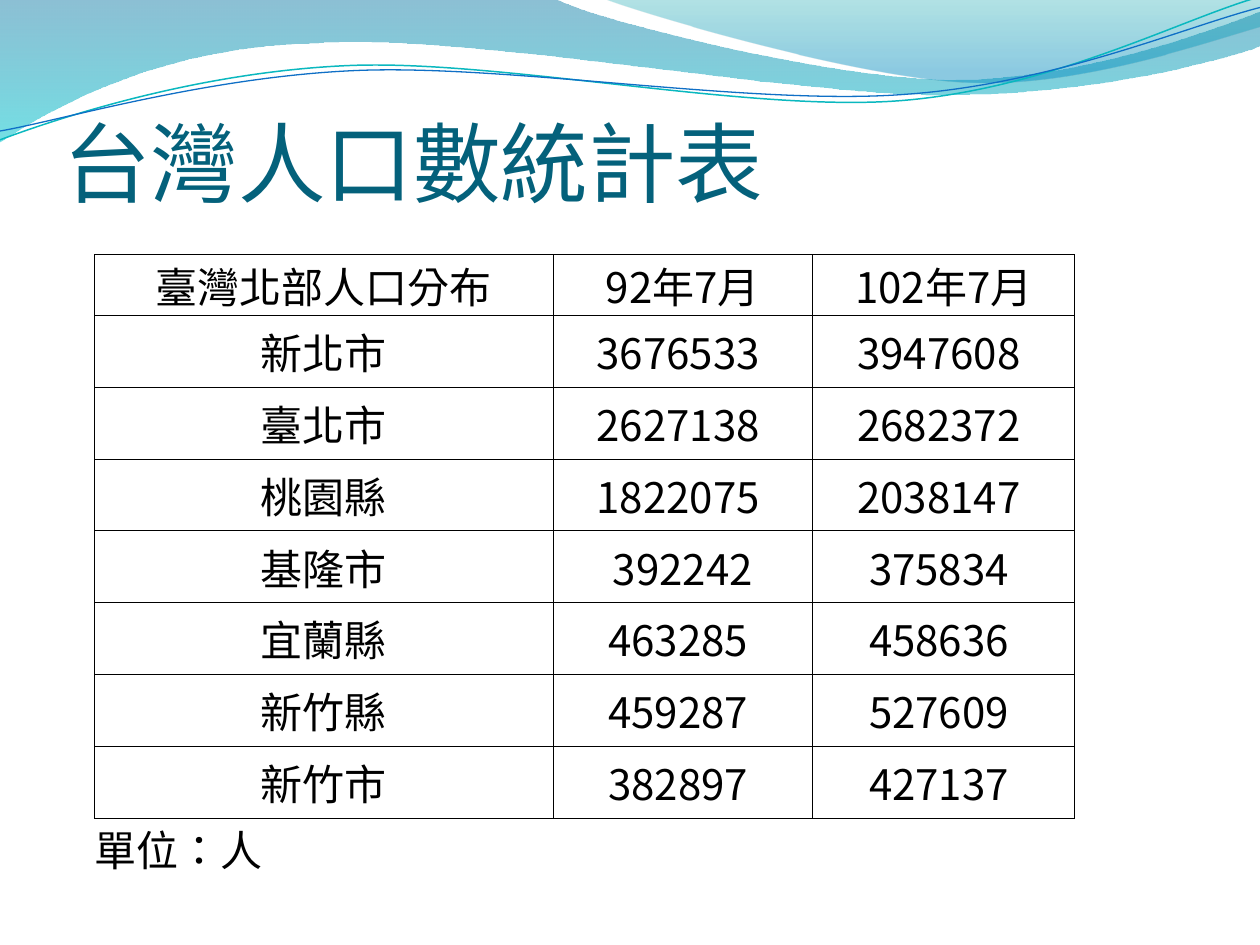
from math import cos, radians, sin

from lxml import etree
from pptx import Presentation
from pptx.dml.color import RGBColor
from pptx.enum.text import MSO_ANCHOR, PP_ALIGN
from pptx.oxml.ns import qn
from pptx.util import Inches, Pt

LEFT, CENTER = PP_ALIGN.LEFT, PP_ALIGN.CENTER
BOTTOM, MIDDLE = MSO_ANCHOR.BOTTOM, MSO_ANCHOR.MIDDLE
TITLE_ONLY = 5
CJK_FONT = "Noto Sans CJK TC"
CURVE_TILT = 2.7

# Each outline: a start point, then Bezier segments (three points) or lines (one point)
BROAD_WAVE = [
    [(0, 0)], [(4.4, -0.01)],
    [(4.76, 0.17), (6.64, 0.63), (7.58, 0.63)],
    [(8.53, 0.63), (9.58, 0.26), (10, 0.09)],
    [(10.01, 0.36)],
    [(9.83, 0.44), (8.7, 0.76), (7.46, 0.75)],
    [(6.22, 0.75), (3.82, 0.28), (2.57, 0.34)],
    [(1.29, 0.36), (0.46, 0.83), (-0.01, 1.13)],
    [(0, 0)],
]
CORNER_WAVE = [
    [(4.79, -0.01)],
    [(5.09, 0.11), (6.82, 0.62), (7.69, 0.65)],
    [(8.56, 0.69), (9.61, 0.32), (10, 0.21)],
    [(10, 0)], [(4.79, -0.01)],
]
TEAL_CURVE = [
    [(0, 1.11)],
    [(0.48, 0.93), (1.58, 0.57), (2.77, 0.52)],
    [(3.95, 0.47), (5.93, 0.89), (7.13, 0.8)],
    [(8.33, 0.71), (9.38, 0.15), (9.98, -0.02)],
]
BLUE_CURVE = [
    [(0, 1.04)],
    [(0.47, 0.96), (1.64, 0.61), (2.83, 0.56)],
    [(4.03, 0.51), (5.97, 0.84), (7.17, 0.75)],
    [(8.36, 0.67), (9.41, 0.21), (10, 0.06)],
]

POPULATION = [
    ("臺灣北部人口分布", "92年7月", "102年7月"),
    ("新北市", "3676533 ", "3947608 "),
    ("臺北市", "2627138 ", "2682372 "),
    ("桃園縣", "1822075 ", "2038147 "),
    ("基隆市", "392242", "375834 "),
    ("宜蘭縣", "463285 ", "458636 "),
    ("新竹縣", "459287 ", "527609 "),
    ("新竹市", "382897 ", "427137 "),
    ("單位：人",),
]
COLUMN_WIDTHS = [3.64, 2.06, 2.08, 1.12]
ROW_HEIGHTS = [0.34] + [0.57] * 7 + [0.47]


def color(hex_string):
    return RGBColor.from_string(hex_string)


def turn(segments, center, degrees):
    """Turn every point clockwise around the center."""
    cosine, sine = cos(radians(degrees)), sin(radians(degrees))
    center_x, center_y = center
    return [[(center_x + (x - center_x) * cosine - (y - center_y) * sine,
              center_y + (x - center_x) * sine + (y - center_y) * cosine)
             for x, y in segment] for segment in segments]


def add_outline(slide, segments, close):
    points = [(Inches(x), Inches(y)) for segment in segments for x, y in segment]
    builder = slide.shapes.build_freeform(*points[0])
    builder.add_line_segments(points[1:], close=close)
    shape = builder.convert_to_shape()
    shape.shadow.inherit = False
    # Join the three points of each Bezier segment into one curve
    lines = iter(list(shape._element.iter(qn("a:lnTo"))))
    for segment in segments[1:]:
        parts = [next(lines) for _ in segment]
        if len(parts) == 3:
            curve = etree.Element(qn("a:cubicBezTo"))
            parts[0].addprevious(curve)
            for part in parts:
                curve.append(part[0])
                part.getparent().remove(part)
    return shape


def add_wave(slide, segments, stops):
    """Add a wave with a top-to-bottom gradient of (position, colour, opacity) stops."""
    shape = add_outline(slide, segments, True)
    shape.line.fill.background()
    shape.fill.gradient()
    shape.fill.gradient_angle = 270
    for stop, (position, hex_string, _) in zip(shape.fill.gradient_stops, stops):
        stop.position = position
        stop.color.rgb = color(hex_string)
    nodes = shape._element.spPr.iter(qn("a:srgbClr"))
    for node, (_, _, opacity) in zip(nodes, stops):
        etree.SubElement(node, qn("a:alpha"), val=str(opacity * 1000))


def add_curve(slide, segments, center, hex_string, width):
    shape = add_outline(slide, turn(segments, center, CURVE_TILT), False)
    shape.rotation = 360 - CURVE_TILT
    shape.fill.background()
    shape.line.color.rgb = color(hex_string)
    shape.line.width = Pt(width)


def format_text(paragraph, font_name, size, hex_string, alignment):
    paragraph.alignment = alignment
    for run in paragraph.runs:
        run.font.name = font_name
        run.font.size = Pt(size)
        run.font.color.rgb = color(hex_string)
        properties = run.font._element
        properties.set("lang", "zh-TW")
        etree.SubElement(properties, qn("a:ea"), typeface=CJK_FONT)


def set_title(slide, text):
    title = slide.shapes.title
    title.left, title.top = Inches(0.5), Inches(0.77)
    title.width, title.height = Inches(8.75), Inches(0.93)
    frame = title.text_frame
    frame.text = text
    frame.vertical_anchor = BOTTOM
    frame.margin_left = frame.margin_right = frame.margin_bottom = 0
    frame.margin_top = Inches(0.05)
    format_text(frame.paragraphs[0], "Calibri", 50, "04617B", LEFT)
    # Bring the title in front of the waves
    slide.shapes._spTree.append(title._element)


def set_borders(cell, visible_sides):
    properties = cell._tc.get_or_add_tcPr()
    for side in "LRTB":
        line = etree.SubElement(properties, qn("a:ln" + side), w=str(Pt(0.5)))
        if side in visible_sides:
            fill = etree.SubElement(line, qn("a:solidFill"))
            etree.SubElement(fill, qn("a:srgbClr"), val="000000")
        else:
            etree.SubElement(line, qn("a:noFill"))


def add_population_table(slide):
    frame = slide.shapes.add_table(
        len(ROW_HEIGHTS), len(COLUMN_WIDTHS), Inches(0.75), Inches(2.02),
        Inches(sum(COLUMN_WIDTHS)), Inches(sum(ROW_HEIGHTS)))
    table = frame.table
    table.first_row = table.horz_banding = False
    for column, width in zip(table.columns, COLUMN_WIDTHS):
        column.width = Inches(width)
    for row, height in zip(table.rows, ROW_HEIGHTS):
        row.height = Inches(height)
    frame.height = Inches(4.87)

    last_row, last_column = len(ROW_HEIGHTS) - 1, len(COLUMN_WIDTHS) - 1
    for r, texts in enumerate(POPULATION):
        for c in range(len(COLUMN_WIDTHS)):
            cell = table.cell(r, c)
            # The unit row and the spare column only touch the ruled grid
            if r == last_row:
                set_borders(cell, "T" if c < last_column else "")
            else:
                set_borders(cell, "LRTB" if c < last_column else "L")
            cell.fill.background()
            cell.margin_left = cell.margin_right = 0
            cell.margin_top = cell.margin_bottom = 0
            cell.vertical_anchor = MIDDLE
            if c < len(texts):
                cell.text = texts[c]
                format_text(cell.text_frame.paragraphs[0], CJK_FONT, 24, "000000",
                            LEFT if r == last_row else CENTER)


def main():
    presentation = Presentation()
    presentation.slide_width, presentation.slide_height = Inches(10), Inches(7.5)
    slide = presentation.slides.add_slide(presentation.slide_layouts[TITLE_ONLY])

    # Waves along the top
    add_wave(slide, BROAD_WAVE, [(0, "0074A1", 45), (1, "00C6CF", 55)])
    add_wave(slide, CORNER_WAVE, [(0, "00A1A9", 30), (0.8, "008BBF", 45)])
    add_curve(slide, TEAL_CURVE, (4.99, 0.58), "0AB8BF", 0.85)
    add_curve(slide, BLUE_CURVE, (5, 0.59), "0F6FC6", 0.75)

    # Content
    set_title(slide, "台灣人口數統計表")
    add_population_table(slide)
    presentation.save("out.pptx")


if __name__ == "__main__":
    main()
